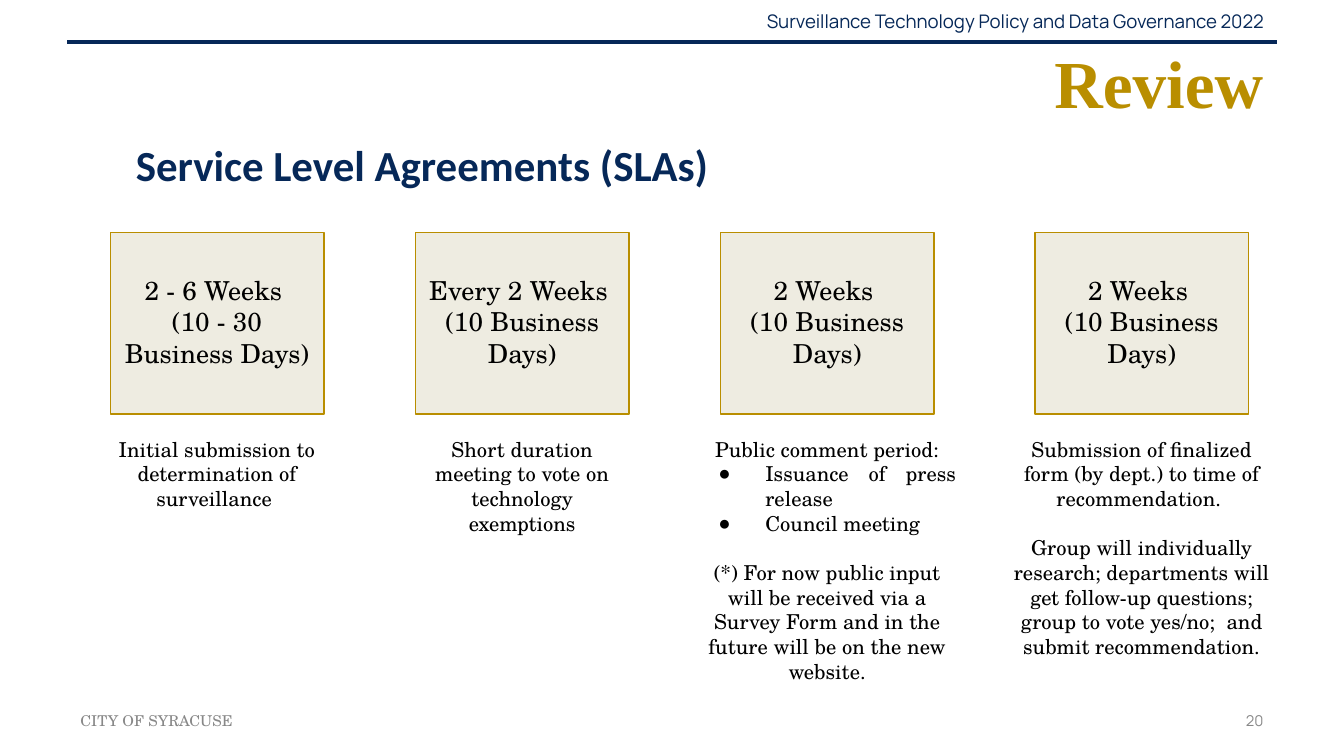
from dataclasses import dataclass

from lxml import etree
from pptx import Presentation
from pptx.dml.color import RGBColor
from pptx.enum.shapes import MSO_CONNECTOR, MSO_SHAPE
from pptx.enum.text import MSO_ANCHOR, MSO_AUTO_SIZE, PP_ALIGN
from pptx.oxml.ns import qn
from pptx.util import Inches, Pt

LEFT, CENTER, RIGHT, JUSTIFY = PP_ALIGN.LEFT, PP_ALIGN.CENTER, PP_ALIGN.RIGHT, PP_ALIGN.JUSTIFY
TOP, MIDDLE = MSO_ANCHOR.TOP, MSO_ANCHOR.MIDDLE
NO_AUTOFIT = MSO_AUTO_SIZE.NONE
RECTANGLE, STRAIGHT = MSO_SHAPE.RECTANGLE, MSO_CONNECTOR.STRAIGHT


@dataclass(frozen=True)
class Theme:
    navy: str = "062858"
    gold: str = "B98E00"
    cream: str = "EEECE1"
    gray: str = "888888"
    black: str = "000000"
    serif: str = "TeX Gyre Schola"
    sans: str = "Manrope"
    heading_font: str = "Calibri"
    title_font: str = "Times New Roman"
    title_size: float = 36
    heading_size: float = 23
    label_size: float = 14
    note_size: float = 11
    header_size: float = 10
    footer_size: float = 8
    note_gap: float = 13.2


THEME = Theme()
SLIDE_WIDTH = 10
SLIDE_HEIGHT = SLIDE_WIDTH * 9 / 16
BOX_TOP, BOX_WIDTH, BOX_HEIGHT = 1.73, 1.59, 1.35
LABEL_TOP, LABEL_WIDTH, NOTE_TOP = 1.94, 1.72, 3.15
BULLET = {"bullet": "●", "align": JUSTIFY}
GAP = {"space_before": THEME.note_gap}

STAGES = [
    (0.82, ["2 - 6 Weeks ", "(10 - 30", "Business Days)"], 0.91, 1.72, 0.76,
     [("Initial submission to determination of surveillance ", {})]),
    (3.09, ["Every 2 Weeks ", "(10 Business Days)"], 0.67, 1.72, 0.76,
     [("Short duration meeting to vote on technology exemptions", {})]),
    (5.36, ["2 Weeks ", "(10 Business Days)"], 0.67, 2.12, 1.87,
     [("Public comment period:", {}),
      ("Issuance of press release ", BULLET),
      ("Council meeting", BULLET),
      ("(*) For now public input will be received via a Survey Form and in the "
       "future will be on the new website.", GAP)]),
    (7.70, ["2 Weeks ", "(10 Business Days)"], 0.67, 2.12, 1.87,
     [("Submission of finalized form (by dept.) to time of recommendation. ", {}),
      ("Group will individually research; departments will get follow-up questions; "
       "group to vote yes/no;  and submit recommendation.", GAP)]),
]


def write_paragraph(paragraph, text, *, size, font, color, bold=False, align=LEFT,
                    bullet=None, space_before=0):
    paragraph.alignment = align
    paragraph.space_before = Pt(space_before)
    run = paragraph.add_run()
    run.text = text
    run.font.size = Pt(size)
    run.font.name = font
    run.font.bold = bold
    run.font.color.rgb = RGBColor.from_string(color)
    properties = paragraph._p.get_or_add_pPr()
    properties.set("marL", str(Inches(0.5 if bullet else 0)))
    properties.set("indent", str(Inches(-0.35 if bullet else 0)))
    if bullet:
        bullet_color = etree.SubElement(properties, qn("a:buClr"))
        etree.SubElement(bullet_color, qn("a:srgbClr"), val=color)
        etree.SubElement(properties, qn("a:buChar"), char=bullet)
    else:
        etree.SubElement(properties, qn("a:buNone"))


class SlideBuilder:
    """Draws themed elements on the current slide."""

    def __init__(self, slide, theme):
        self.slide = slide
        self.theme = theme

    def fill_frame(self, shape, paragraphs, *, anchor=TOP, inset=0.1, **style):
        frame = shape.text_frame
        frame.word_wrap = True
        frame.auto_size = NO_AUTOFIT
        frame.vertical_anchor = anchor
        frame.margin_left = frame.margin_right = Inches(0.1)
        frame.margin_top = frame.margin_bottom = Inches(inset)
        for index, (text, options) in enumerate(paragraphs):
            paragraph = frame.add_paragraph() if index else frame.paragraphs[0]
            write_paragraph(paragraph, text, **{**style, **options})

    def text(self, bounds, paragraphs, **style):
        shape = self.slide.shapes.add_textbox(*map(Inches, bounds))
        self.fill_frame(shape, paragraphs, **style)

    def placeholder(self, shape, bounds, paragraphs, **style):
        shape.left, shape.top, shape.width, shape.height = map(Inches, bounds)
        self.fill_frame(shape, paragraphs, **style)

    def box(self, bounds):
        shape = self.slide.shapes.add_shape(RECTANGLE, *map(Inches, bounds))
        shape.shadow.inherit = False
        shape.fill.solid()
        shape.fill.fore_color.rgb = RGBColor.from_string(self.theme.cream)
        shape.line.color.rgb = RGBColor.from_string(self.theme.gold)
        shape.line.width = Pt(0.75)

    def rule(self, start_x, end_x, y):
        line = self.slide.shapes.add_connector(
            STRAIGHT, Inches(start_x), Inches(y), Inches(end_x), Inches(y))
        line.line.color.rgb = RGBColor.from_string(self.theme.navy)
        line.line.width = Pt(2.25)
        etree.SubElement(line._element.spPr, qn("a:effectLst"))

    def stage(self, left, label, label_height, note_width, note_height, note):
        center = left + BOX_WIDTH / 2
        self.box((left, BOX_TOP, BOX_WIDTH, BOX_HEIGHT))
        self.text((center - LABEL_WIDTH / 2, LABEL_TOP, LABEL_WIDTH, label_height),
                  [(line, {}) for line in label], size=self.theme.label_size,
                  font=self.theme.serif, color=self.theme.black, align=CENTER)
        bounds = (center - note_width / 2, NOTE_TOP, note_width, note_height)
        style = {"size": self.theme.note_size, "font": self.theme.serif,
                 "color": self.theme.black, "align": CENTER}
        if any("bullet" in options for _, options in note):
            self.placeholder(self.slide.placeholders[1], bounds, note, **style)
        else:
            self.text(bounds, note, **style)


def main():
    presentation = Presentation()
    presentation.slide_width = Inches(SLIDE_WIDTH)
    presentation.slide_height = Inches(SLIDE_HEIGHT)
    slide = presentation.slides.add_slide(presentation.slide_layouts[1])
    builder = SlideBuilder(slide, THEME)
    margin_style = {"anchor": MIDDLE, "inset": 0.05}
    footer_style = {**margin_style, "size": THEME.footer_size, "color": THEME.gray}

    builder.text((5.21, 0.01, 4.29, 0.3),
                 [("Surveillance Technology Policy and Data Governance 2022", {})],
                 size=THEME.header_size, font=THEME.sans, color=THEME.navy,
                 align=RIGHT, **margin_style)
    builder.rule(0.5, 9.5, 0.31)
    builder.placeholder(slide.shapes.title, (0.96, 0.29, 8.54, 0.64), [("Review", {})],
                        size=THEME.title_size, font=THEME.title_font, color=THEME.gold,
                        bold=True, align=RIGHT, **margin_style)
    builder.text((0.73, 0.93, 4.83, 0.67), [("Service Level Agreements (SLAs)", {})],
                 size=THEME.heading_size, font=THEME.heading_font, color=THEME.navy,
                 bold=True, align=CENTER)
    for stage in STAGES:
        builder.stage(*stage)
    builder.text((0.5, 5.21, 2.33, 0.3), [("CITY OF SYRACUSE", {})],
                 font=THEME.serif, **footer_style)
    builder.text((7.17, 5.21, 2.33, 0.3), [("20", {})],
                 font=THEME.sans, align=RIGHT, **footer_style)
    presentation.save("out.pptx")


if __name__ == "__main__":
    main()
